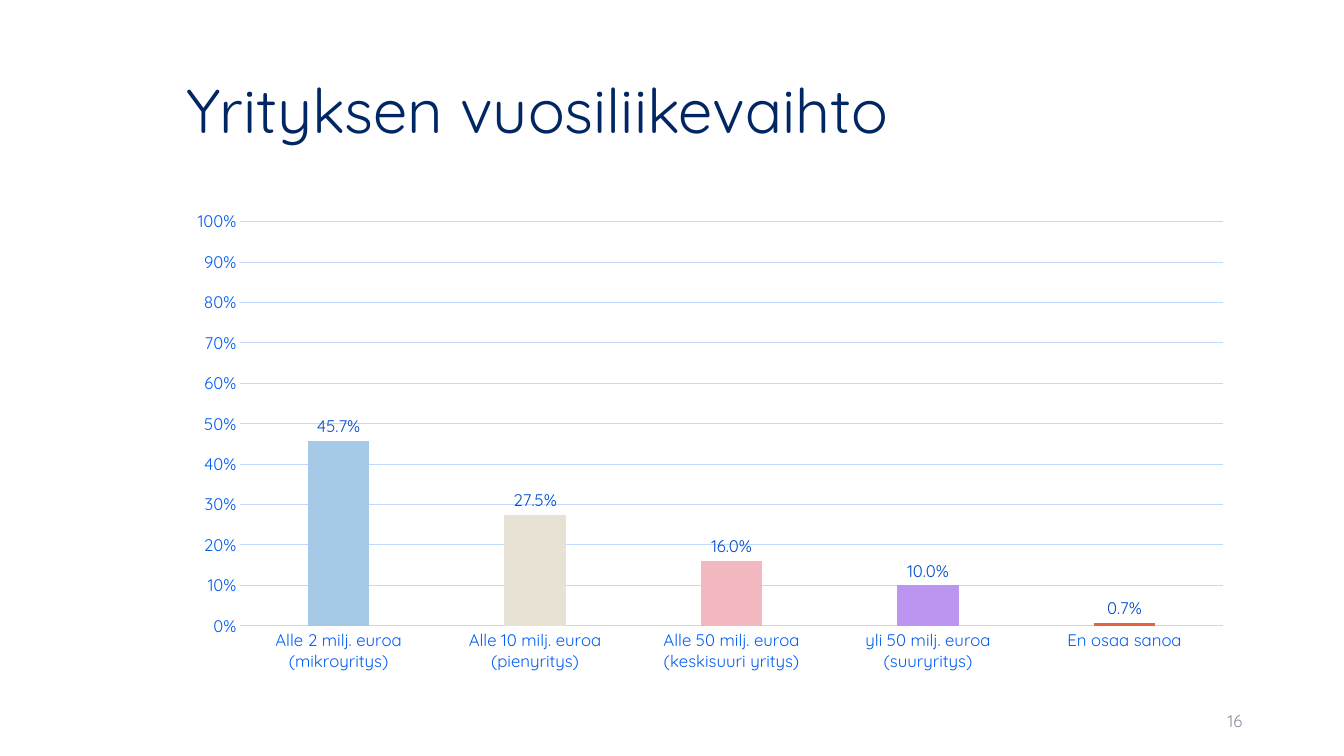
from pptx import Presentation
from pptx import util as u
from pptx.chart.data import CategoryChartData
from pptx.dml.color import RGBColor
from pptx.enum import chart as ch, text

COLORS = {"title": "002663", "number": "8C8E9F", "axis": "005DF3",
          "grid": "C1D9FF", "label": "004DCA"}
TURNOVER = [
    ("Alle 2 milj. euroa (mikroyritys)", 0.457, "A5C9E7"),
    ("Alle 10 milj. euroa (pienyritys)", 0.275, "E8E2D5"),
    ("Alle 50 milj. euroa (keskisuuri yritys)", 0.16, "F2B7BF"),
    ("yli 50 milj. euroa (suuryritys)", 0.1, "BB95EF"),
    ("En osaa sanoa", 0.007, "E66342"),
]


class SlideBuilder:
    font_name = "Quicksand"

    def __init__(self, slide):
        self.slide = slide

    def style_font(self, font, size, color):
        font.name = self.font_name
        font.size = u.Pt(size)
        font.color.rgb = RGBColor.from_string(COLORS[color])

    def style_line(self, line):
        line.color.rgb = RGBColor.from_string(COLORS["grid"])
        line.width = u.Pt(0.75)

    def text_box(self, words, box, size, color, align, spacing=1.0):
        sp = self.slide.shapes.add_textbox(*map(u.Inches, box))
        tf = sp.text_frame
        tf.word_wrap = True
        tf.vertical_anchor = text.MSO_ANCHOR.MIDDLE
        p = tf.paragraphs[0]
        p.text = words
        p.alignment = align
        p.line_spacing = spacing
        self.style_font(p.font, size, color)

    def column_chart(self, rows, box):
        """Draw one column per (category, share, colour) row."""
        data = CategoryChartData(number_format="0.0%")
        data.categories = [name for name, _, _ in rows]
        data.add_series("Series 1", [share for _, share, _ in rows])
        chart = self.slide.shapes.add_chart(
            ch.XL_CHART_TYPE.COLUMN_CLUSTERED, *map(u.Inches, box), data).chart
        chart.has_legend = chart.has_title = False
        self.style_font(chart.font, 10, "title")

        for axis in (chart.category_axis, chart.value_axis):
            axis.major_tick_mark = axis.minor_tick_mark = ch.XL_TICK_MARK.NONE
            self.style_font(axis.tick_labels.font, 12, "axis")
        self.style_line(chart.category_axis.format.line)
        values = chart.value_axis
        values.minimum_scale, values.maximum_scale = 0, 1
        values.major_unit = 0.1
        values.tick_labels.number_format = "0%"
        values.tick_labels.number_format_is_linked = False
        values.format.line.fill.background()
        self.style_line(values.major_gridlines.format.line)

        plot = chart.plots[0]
        plot.gap_width, plot.overlap = 219, -27
        plot.vary_by_categories = False
        series = plot.series[0]
        for i, (_, _, color) in enumerate(rows):
            fill = series.points[i].format.fill
            fill.solid()
            fill.fore_color.rgb = RGBColor.from_string(color)
        labels = series.data_labels
        labels.show_value = True
        labels.number_format = "0.0%"
        labels.number_format_is_linked = False
        labels.position = ch.XL_LABEL_POSITION.OUTSIDE_END
        self.style_font(labels.font, 12, "label")


def main():
    prs = Presentation()
    prs.slide_width, prs.slide_height = u.Inches(13.33), u.Inches(7.5)
    s = SlideBuilder(prs.slides.add_slide(prs.slide_layouts[6]))
    s.text_box("Yrityksen vuosiliikevaihto", (1.75, 0.4, 10.59, 1.45),
               44, "title", text.PP_ALIGN.LEFT, 0.9)
    s.text_box("16", (9.42, 6.95, 3, 0.4), 12, "number", text.PP_ALIGN.RIGHT)
    s.column_chart(TURNOVER, (1.75, 2, 10.59, 4.76))
    prs.save("out.pptx")


if __name__ == "__main__":
    main()
